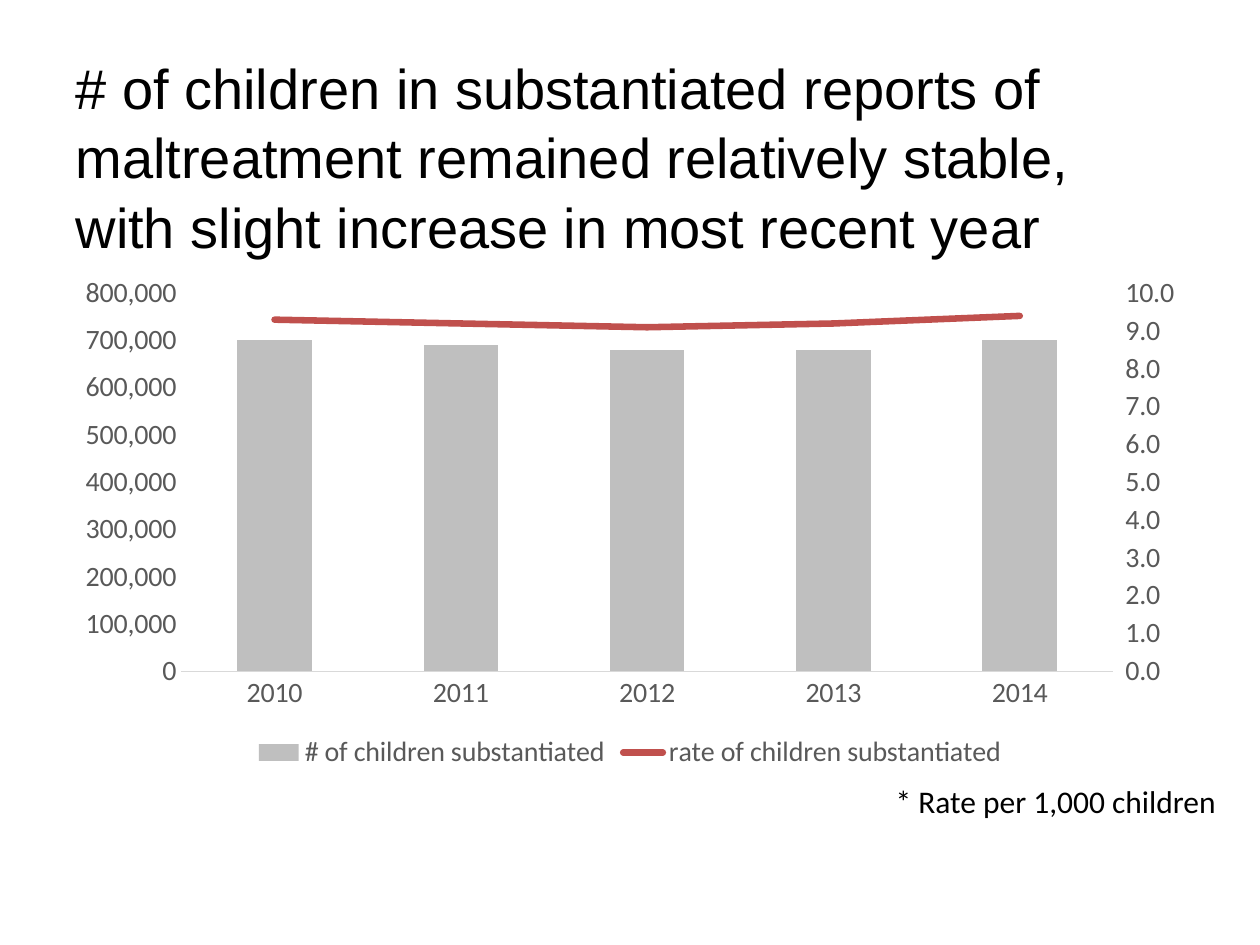
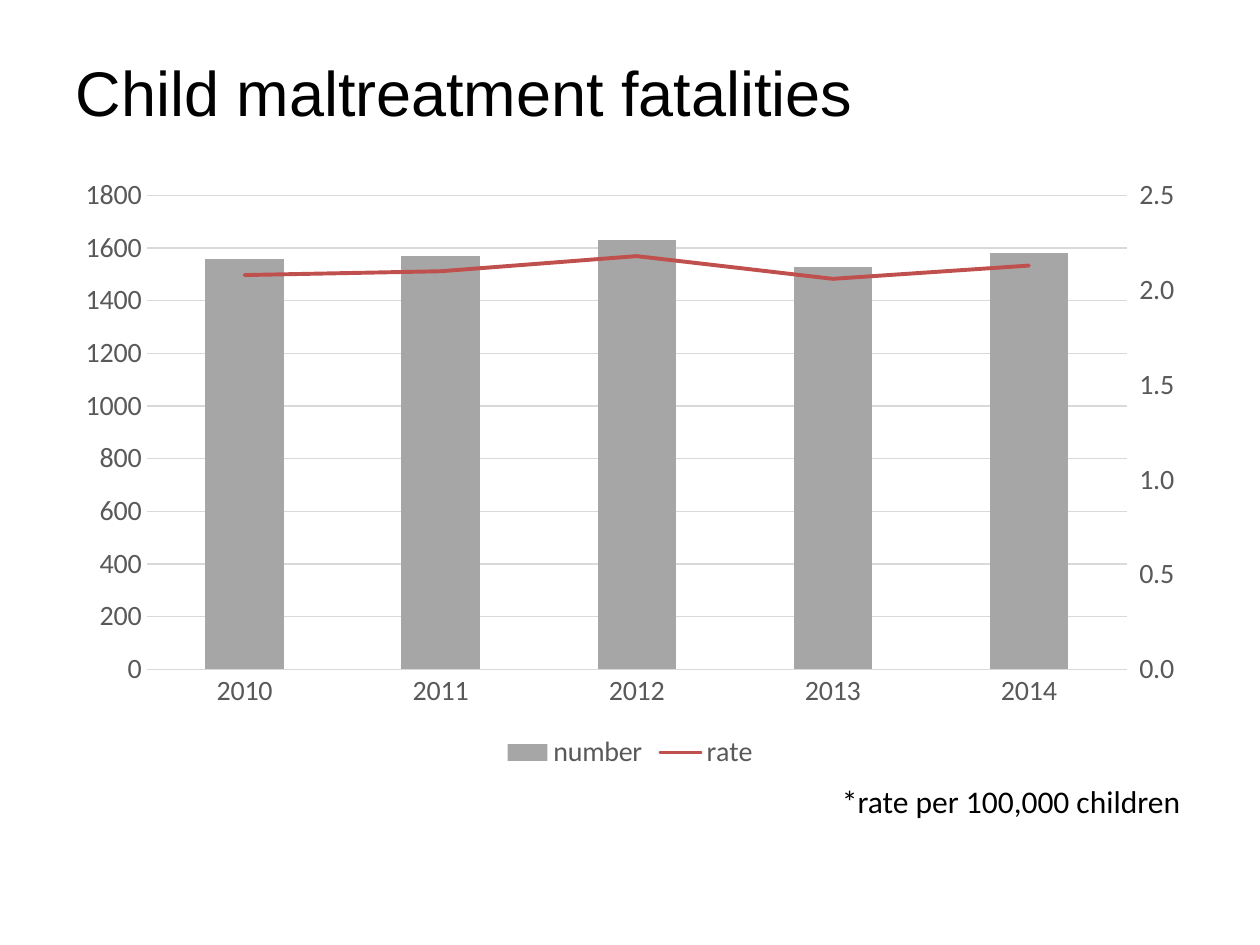
from copy import deepcopy

from pptx import Presentation
from pptx.chart.axis import ValueAxis
from pptx.chart.data import CategoryChartData
from pptx.dml.color import RGBColor
from pptx.enum.chart import (XL_CHART_TYPE, XL_LEGEND_POSITION, XL_MARKER_STYLE,
                             XL_TICK_MARK)
from pptx.enum.text import MSO_ANCHOR, MSO_AUTO_SIZE, PP_ALIGN
from pptx.oxml import parse_xml
from pptx.oxml.ns import nsdecls
from pptx.util import Pt

# Shared style
BLACK, LABEL_GREY, RULE_GREY, RATE_RED = "000000", "595959", "D9D9D9", "C0504D"
HEADING_FONT, BODY_FONT = "Arial", "Calibri"
TITLE_BOX = (36, 21.6, 648, 90)
CHART_LEFT, CHART_WIDTH, CHART_BOTTOM = 36, 648, 443
YEARS = ["2010", "2011", "2012", "2013", "2014"]
RATE_CATEGORY_ID, RATE_VALUE_ID = "50010", "50020"


def color(hex_string):
    return RGBColor.from_string(hex_string)


def style_font(font, size, hex_string, name=BODY_FONT):
    font.name = name
    font.size = Pt(size)
    font.color.rgb = color(hex_string)


def place(part, box):
    part.left, part.top, part.width, part.height = map(Pt, box)


def add_heading(slide, box, wording, size):
    title = slide.shapes.title
    place(title, box)
    frame = title.text_frame
    frame.text = wording
    frame.word_wrap = True
    frame.auto_size = MSO_AUTO_SIZE.NONE
    frame.vertical_anchor = MSO_ANCHOR.TOP
    frame.margin_left = frame.margin_right = frame.margin_top = Pt(7.2)
    paragraph = frame.paragraphs[0]
    paragraph.alignment = PP_ALIGN.LEFT
    paragraph.line_spacing = 1.04
    style_font(paragraph.runs[0].font, size, BLACK, HEADING_FONT)


def add_footnote(slide, box, wording, alignment):
    frame = slide.shapes.add_textbox(*map(Pt, box)).text_frame
    frame.word_wrap = True
    frame.auto_size = MSO_AUTO_SIZE.SHAPE_TO_FIT_TEXT
    frame.text = wording
    frame.paragraphs[0].alignment = alignment
    style_font(frame.paragraphs[0].runs[0].font, 18, BLACK)


def scale_axis(axis, maximum, step, number_format):
    axis.minimum_scale, axis.maximum_scale, axis.major_unit = 0, maximum, step
    axis.tick_labels.number_format = number_format
    axis.tick_labels.number_format_is_linked = False


def set_values(element, **values):
    for tag, value in values.items():
        element.xpath(f"c:{tag}")[0].set("val", value)


def move_rate_to_right_axis(chart):
    """Turn the second series into a line with its own axis pair; return its value axis."""
    plot_area = chart.plots[0]._element.getparent()
    bars = plot_area.xpath("c:barChart")[0]
    rate = bars.xpath("c:ser")[1]
    for flag in rate.xpath("c:invertIfNegative"):
        rate.remove(flag)
    line_plot = parse_xml(
        f'<c:lineChart {nsdecls("c")}><c:grouping val="standard"/><c:varyColors val="0"/>'
        f'<c:marker val="1"/><c:axId val="{RATE_CATEGORY_ID}"/>'
        f'<c:axId val="{RATE_VALUE_ID}"/></c:lineChart>')
    line_plot.insert(2, rate)
    bars.addnext(line_plot)

    left_axis = plot_area.xpath("c:valAx")[0]
    right_axis = deepcopy(left_axis)
    hidden_years = deepcopy(plot_area.xpath("c:catAx")[0])
    set_values(right_axis, axId=RATE_VALUE_ID, crossAx=RATE_CATEGORY_ID,
               axPos="r", crosses="max")
    set_values(hidden_years, axId=RATE_CATEGORY_ID, crossAx=RATE_VALUE_ID, delete="1")
    left_axis.addnext(right_axis)
    right_axis.addnext(hidden_years)
    return ValueAxis(right_axis)


def add_count_and_rate_chart(slide, box, counts, rates, gridlines):
    data = CategoryChartData()
    data.categories = YEARS
    for series in (counts, rates):
        data.add_series(series["name"], series["values"])
    chart = slide.shapes.add_chart(XL_CHART_TYPE.COLUMN_CLUSTERED,
                                   *map(Pt, box), data).chart
    chart.has_title = False
    style_font(chart.font, 10, BLACK)

    # Legend
    chart.has_legend = True
    chart.legend.position = XL_LEGEND_POSITION.BOTTOM
    chart.legend.include_in_layout = False
    style_font(chart.legend.font, 16, LABEL_GREY)

    # Axes: the right one starts as a copy of the left one
    years, count_axis = chart.category_axis, chart.value_axis
    for axis in (years, count_axis):
        axis.major_tick_mark = axis.minor_tick_mark = XL_TICK_MARK.NONE
        axis.has_major_gridlines = False
        style_font(axis.tick_labels.font, 16, LABEL_GREY)
    rules = [years.format.line]
    count_axis.format.line.fill.background()
    rate_axis = move_rate_to_right_axis(chart)
    rate_axis.major_tick_mark = XL_TICK_MARK.OUTSIDE
    scale_axis(count_axis, *counts["scale"])
    scale_axis(rate_axis, *rates["scale"])
    if gridlines:
        count_axis.has_major_gridlines = True
        rules.append(count_axis.major_gridlines.format.line)
    for rule in rules:
        rule.color.rgb = color(RULE_GREY)
        rule.width = Pt(0.75)

    # Columns
    columns, rate_plot = chart.plots
    columns.gap_width = 150
    columns.vary_by_categories = False
    fill = columns.series[0].format.fill
    fill.solid()
    fill.fore_color.rgb = color(counts["color"])

    # Rate line
    rate_line = rate_plot.series[0]
    rate_line.smooth = False
    rate_line.marker.style = XL_MARKER_STYLE.NONE
    rate_line.format.line.color.rgb = color(RATE_RED)
    rate_line.format.line.width = Pt(rates["width"])
    rate_line._element.xpath("c:spPr/a:ln")[0].set("cap", "rnd")


def add_trend_slide(deck, heading, heading_size, chart_top, counts, rates,
                    gridlines, footnote):
    slide = deck.slides.add_slide(deck.slide_layouts.get_by_name("Title Only"))
    add_heading(slide, TITLE_BOX, heading, heading_size)
    chart_box = (CHART_LEFT, chart_top, CHART_WIDTH, CHART_BOTTOM - chart_top)
    add_count_and_rate_chart(slide, chart_box, counts, rates, gridlines)
    add_footnote(slide, *footnote)


def main():
    deck = Presentation()
    deck.slide_width, deck.slide_height = Pt(720), Pt(540)

    add_trend_slide(
        deck,
        "# of children in substantiated reports of maltreatment remained "
        "relatively stable, with slight increase in most recent year",
        heading_size=32, chart_top=152,
        counts={"name": "# of children substantiated",
                "values": [700000, 690000, 680000, 680000, 700000],
                "color": "BFBFBF", "scale": (800000, 100000, "#,##0")},
        rates={"name": "rate of children substantiated",
               "values": [9.3, 9.2, 9.1, 9.2, 9.4],
               "width": 3.75, "scale": (10, 1, "#,##0.0")},
        gridlines=False,
        footnote=((417, 443.5, 285, 29), "* Rate per 1,000 children", PP_ALIGN.RIGHT))

    add_trend_slide(
        deck, "Child maltreatment fatalities",
        heading_size=36, chart_top=95,
        counts={"name": "number", "values": [1560, 1570, 1630, 1530, 1580],
                "color": "A6A6A6", "scale": (1800, 200, "General")},
        rates={"name": "rate", "values": [2.08, 2.1, 2.18, 2.06, 2.13],
               "width": 2.25, "scale": (2.5, 0.5, "#,##0.0")},
        gridlines=True,
        footnote=((474, 443.5, 231, 29), "*rate per 100,000 children", PP_ALIGN.LEFT))

    deck.save("out.pptx")


if __name__ == "__main__":
    main()
